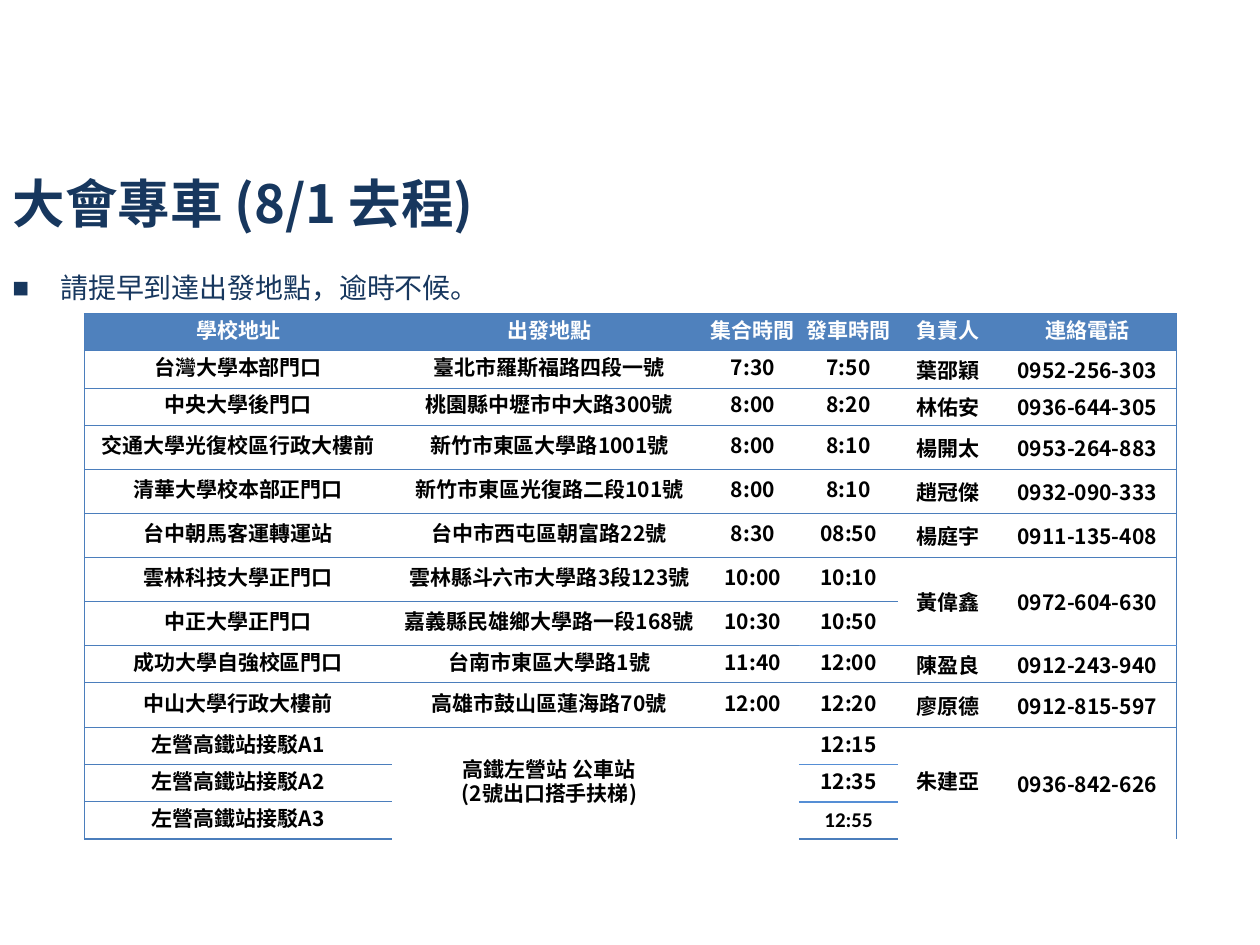
from lxml.etree import SubElement
from pptx import Presentation
from pptx.dml.color import RGBColor
from pptx.enum.text import MSO_ANCHOR, PP_ALIGN
from pptx.oxml.ns import qn
from pptx.util import Inches, Pt

NAVY = RGBColor(0x17, 0x37, 0x5E)
HEADER_BLUE = RGBColor(0x4F, 0x81, 0xBD)
RULE_BLUE = RGBColor(0x4B, 0x7E, 0xBC)
ACCENT_BLUE = RGBColor(0x55, 0x8E, 0xD5)
WHITE = RGBColor(0xFF, 0xFF, 0xFF)
BLACK = RGBColor(0, 0, 0)
CJK_FONT = "Noto Sans CJK SC"

# Content
TITLE = "大會專車 (8/1 去程)"
NOTICE = "請提早到達出發地點，逾時不候。"
HEADINGS = ("學校地址", "出發地點", "集合時間", "發車時間", "負責人", "連絡電話")
STOPS = [
    ("台灣大學本部門口", "臺北市羅斯福路四段一號", "7:30", "7:50", "葉邵穎", "0952-256-303"),
    ("中央大學後門口", "桃園縣中壢市中大路300號", "8:00", "8:20", "林佑安", "0936-644-305"),
    ("交通大學光復校區行政大樓前", "新竹市東區大學路1001號", "8:00", "8:10", "楊開太", "0953-264-883"),
    ("清華大學校本部正門口", "新竹市東區光復路二段101號", "8:00", "8:10", "趙冠傑", "0932-090-333"),
    ("台中朝馬客運轉運站", "台中市西屯區朝富路22號", "8:30", "08:50", "楊庭宇", "0911-135-408"),
    ("雲林科技大學正門口", "雲林縣斗六市大學路3段123號", "10:00", "10:10", "黃偉鑫", "0972-604-630"),
    ("中正大學正門口", "嘉義縣民雄鄉大學路一段168號", "10:30", "10:50", "", ""),
    ("成功大學自強校區門口", "台南市東區大學路1號", "11:40", "12:00", "陳盈良", "0912-243-940"),
    ("中山大學行政大樓前", "高雄市鼓山區蓮海路70號", "12:00", "12:20", "廖原德", "0912-815-597"),
    ("左營高鐵站接駁A1", "高鐵左營站 公車站\n(2號出口搭手扶梯)", "", "12:15", "朱建亞", "0936-842-626"),
    ("左營高鐵站接駁A2", "", "", "12:35", "", ""),
    ("左營高鐵站接駁A3", "", "", "12:55", "", ""),
]
COLUMN_WIDTHS = (2.44, 2.5, 0.73, 0.79, 0.79, 1.42)
ROW_HEIGHTS = (0.27, 0.29, 0.29, 0.35, 0.35, 0.35, 0.35, 0.35, 0.29, 0.33, 0.29, 0.29, 0.29)
# Shared cells: (first row, last row, columns)
SHARED = [(6, 7, (4, 5)), (10, 12, (1, 2, 4, 5))]
# Heavier rules: row above the rule -> columns
ACCENT_RULES = {7: (3, 4, 5), 10: (3,), 11: (3,)}
LAST_ROW, LAST_COLUMN = len(STOPS), len(HEADINGS) - 1
NAME_COLUMN = 4


def add_run(paragraph, text, size, color, font=CJK_FONT, bold=False):
    run = paragraph.add_run()
    run.text = text
    run.font.size, run.font.bold, run.font.name = Pt(size), bold, font
    run.font.color.rgb = color
    SubElement(run.font._element, qn("a:ea"), typeface=CJK_FONT)


def add_border(cell, side, color=None, width=0.75):
    line = SubElement(cell._tc.get_or_add_tcPr(), qn(f"a:ln{side}"), w=str(Pt(width)))
    if color is None:
        SubElement(line, qn("a:noFill"))
    else:
        fill = SubElement(line, qn("a:solidFill"))
        SubElement(fill, qn("a:srgbClr"), val=str(color))


def rule_below(row, column):
    """Colour and width of the rule under a row, or no rule inside a shared cell."""
    if any(first <= row < last and column in columns for first, last, columns in SHARED):
        return None, 0.75
    if column in ACCENT_RULES.get(row, ()):
        return ACCENT_BLUE, 1
    return RULE_BLUE, 0.75


def cell_margins(row, column):
    if row == 9 and column in (1, 2, 3):
        return 0.08, 0.08
    return (0.01, 0.01) if column in (2, 4, 5) else (0.03, 0.05)


def format_cell(cell, row, column, text):
    side, top = cell_margins(row, column)
    cell.margin_left = cell.margin_right = Inches(side)
    cell.margin_top = cell.margin_bottom = Inches(top)
    cell.vertical_anchor = MSO_ANCHOR.MIDDLE
    add_border(cell, "L", RULE_BLUE if column == 0 else None)
    add_border(cell, "R", RULE_BLUE if column == LAST_COLUMN else None)
    add_border(cell, "T", *rule_below(row - 1, column))
    add_border(cell, "B", *rule_below(row, column))
    cell.fill.solid()
    cell.fill.fore_color.rgb = HEADER_BLUE if row == 0 else WHITE

    frame = cell.text_frame
    fixed_spacing = row == 0 or column < NAME_COLUMN or (row, column) == (10, NAME_COLUMN)
    latin = "Calibri" if row == 0 or (row, column) == (LAST_ROW, 3) else CJK_FONT
    for index, line in enumerate(text.split("\n")):
        paragraph = frame.paragraphs[0] if index == 0 else frame.add_paragraph()
        paragraph.alignment = PP_ALIGN.CENTER
        if fixed_spacing:
            paragraph.line_spacing = Pt(14)
        if line:
            add_run(paragraph, line, 12, WHITE if row == 0 else BLACK, latin, bold=True)
        else:
            paragraph.font.size = Pt(12)


presentation = Presentation()
presentation.slide_width, presentation.slide_height = Inches(10), Inches(7.5)
slide = presentation.slides.add_slide(presentation.slide_layouts[5])

# Title
title = slide.shapes.title
title.left, title.top, title.width, title.height = map(Inches, (0, 1.31, 9.18, 0.79))
title.text_frame.vertical_anchor = MSO_ANCHOR.TOP
heading = title.text_frame.paragraphs[0]
heading.alignment = PP_ALIGN.LEFT
add_run(heading, TITLE, 30, NAVY, bold=True)

# Bulleted notice
notice = slide.shapes.add_textbox(*map(Inches, (0, 2.1, 9.88, 0.39))).text_frame
notice.word_wrap = True
reminder = notice.paragraphs[0]
properties = reminder._p.get_or_add_pPr()
properties.set("marL", str(Inches(0.38)))
properties.set("indent", str(-Inches(0.38)))
SubElement(properties, qn("a:buFont"), typeface="Arial")
SubElement(properties, qn("a:buChar"), char="■")
add_run(reminder, NOTICE, 16, NAVY, "Arial")

# Bus timetable
timetable = slide.shapes.add_table(
    LAST_ROW + 1, LAST_COLUMN + 1, Inches(0.67), Inches(2.49),
    Inches(sum(COLUMN_WIDTHS)), Inches(sum(ROW_HEIGHTS))).table
for column, width in zip(timetable.columns, COLUMN_WIDTHS):
    column.width = Inches(width)
for row, height in zip(timetable.rows, ROW_HEIGHTS):
    row.height = Inches(height)
for first, last, columns in SHARED:
    for column in columns:
        timetable.cell(first, column).merge(timetable.cell(last, column))
for row, texts in enumerate([HEADINGS, *STOPS]):
    for column, text in enumerate(texts):
        format_cell(timetable.cell(row, column), row, column, text)

presentation.save("out.pptx")
